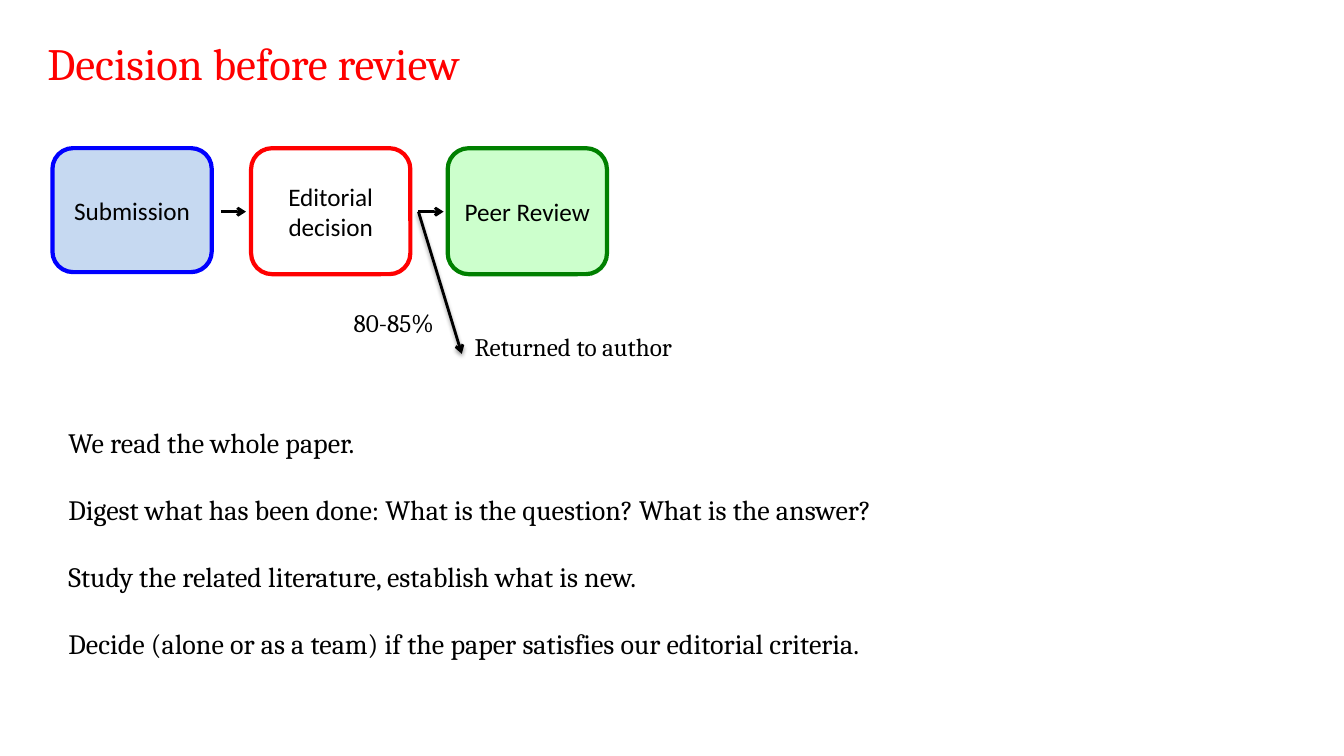
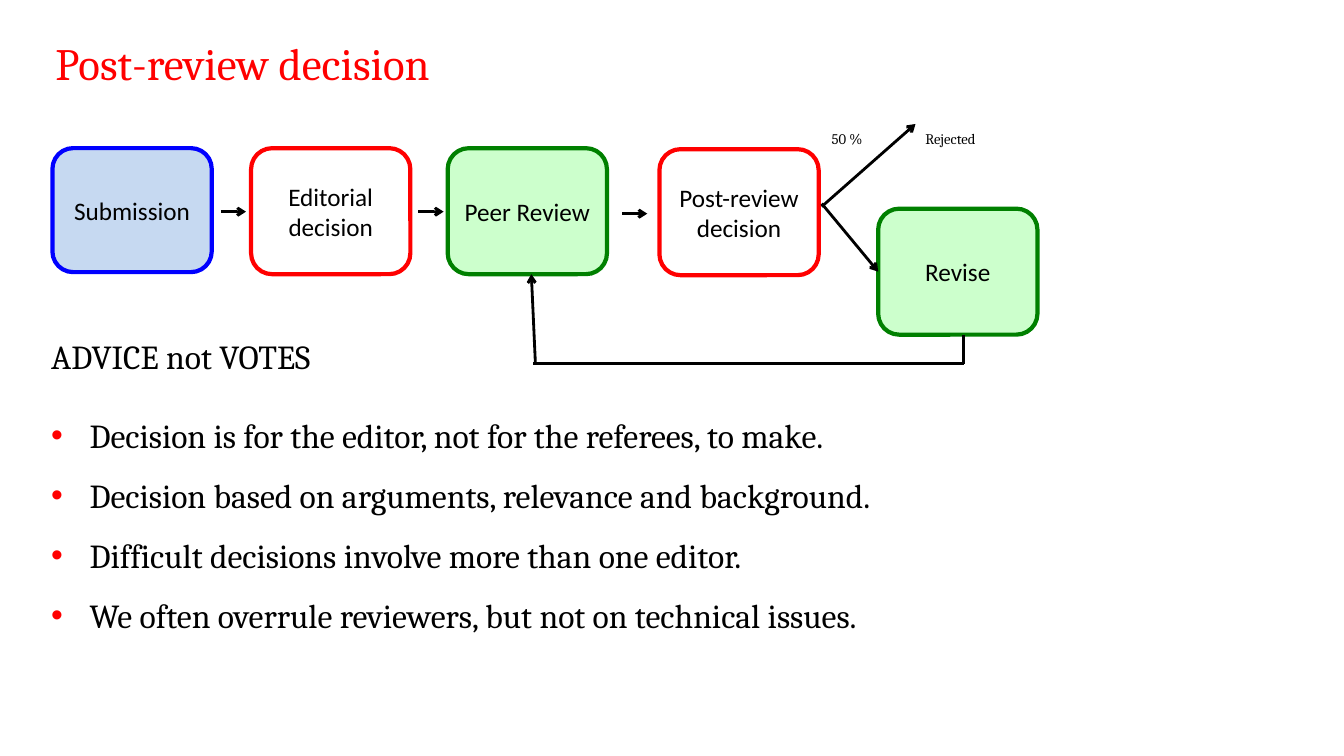
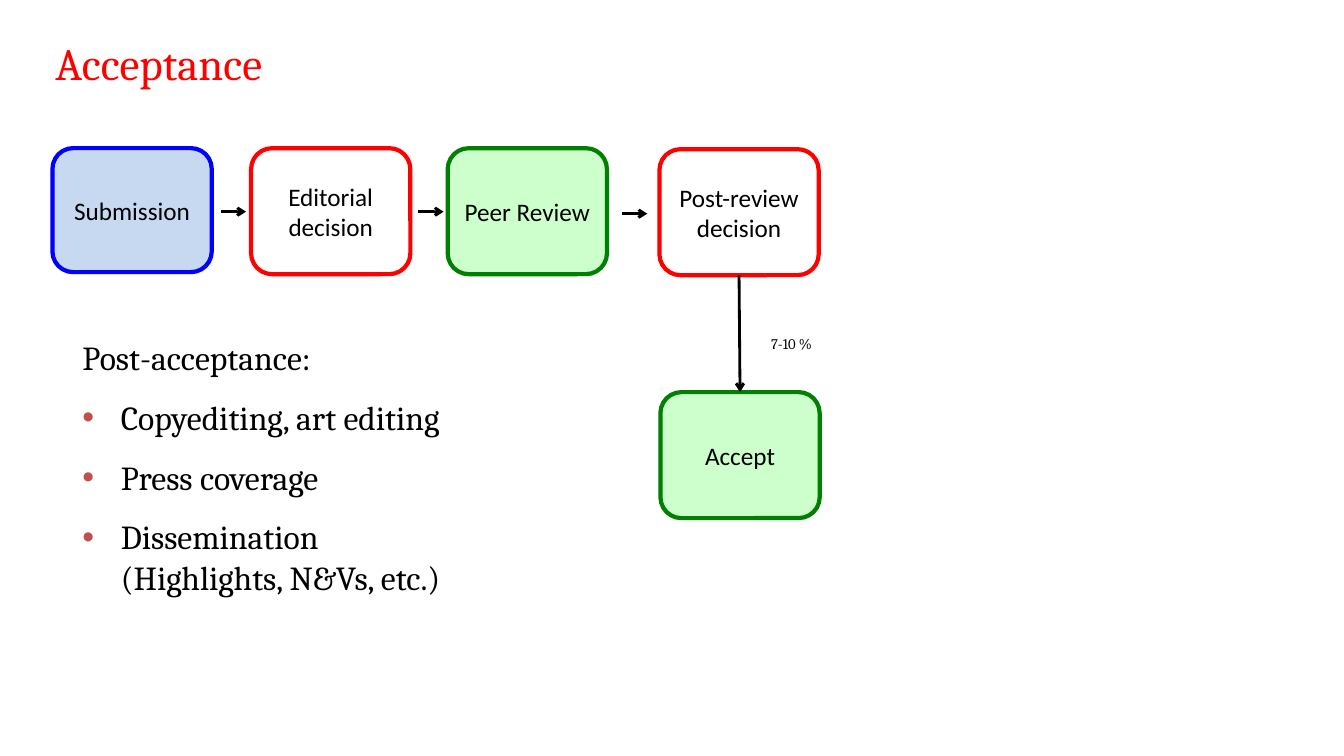
from lxml.etree import SubElement
from pptx import Presentation
from pptx.dml.color import RGBColor
from pptx.enum.shapes import MSO_CONNECTOR, MSO_SHAPE
from pptx.enum.text import MSO_ANCHOR, PP_ALIGN
from pptx.oxml.ns import qn
from pptx.util import Inches, Pt

BLACK = RGBColor(0x00, 0x00, 0x00)
WHITE = RGBColor(0xFF, 0xFF, 0xFF)
RED = RGBColor(0xFF, 0x00, 0x00)
BRICK = RGBColor(0xC0, 0x50, 0x4D)
BLUE = RGBColor(0x00, 0x00, 0xFF)
PALE_BLUE = RGBColor(0xC6, 0xD9, 0xF1)
GREEN = RGBColor(0x00, 0x80, 0x00)
PALE_GREEN = RGBColor(0xCC, 0xFF, 0xCC)
SERIF = "Cambria"
SANS = "Calibri"

STAGES = [
    ("Submission", 0.52, 1.47, 1.23, PALE_BLUE, BLUE),
    ("Editorial decision", 2.49, 1.47, 1.25, WHITE, RED),
    ("Peer Review", 4.44, 1.47, 1.25, PALE_GREEN, GREEN),
    ("Post-review decision", 6.54, 1.48, 1.25, WHITE, RED),
]
STAGE_ARROWS = [(2.19, 2.1), (4.15, 2.1), (6.17, 2.12)]


def add_stage(page, name, left, top, height, fill, outline):
    box = page.shapes.add_shape(
        MSO_SHAPE.ROUNDED_RECTANGLE, Inches(left), Inches(top), Inches(1.58), Inches(height)
    )
    box.shadow.inherit = False
    box.fill.solid()
    box.fill.fore_color.rgb = fill
    box.line.color.rgb = outline
    box.line.width = Pt(3)
    frame = box.text_frame
    frame.word_wrap = True
    frame.vertical_anchor = MSO_ANCHOR.MIDDLE
    frame.margin_left = frame.margin_right = Inches(0.05)
    para = frame.paragraphs[0]
    para.alignment = PP_ALIGN.CENTER
    span = para.add_run()
    span.text = name
    span.font.name = SANS
    span.font.size = Pt(18)
    span.font.color.rgb = BLACK
    return box


def add_line(page, x1, y1, x2, y2, arrow=True):
    line = page.shapes.add_connector(
        MSO_CONNECTOR.STRAIGHT, Inches(x1), Inches(y1), Inches(x2), Inches(y2)
    )
    line.line.color.rgb = BLACK
    line.line.width = Pt(2)
    SubElement(line._element.spPr, qn("a:effectLst"))
    if arrow:
        SubElement(line.line._get_or_add_ln(), qn("a:tailEnd"), type="arrow")
    return line


deck = Presentation()
deck.slide_width = Inches(13.33)
deck.slide_height = Inches(7.5)

pages = []
last_stages = []
for heading, title_left, stage_count in [
    ("Decision before review", 0.37, 3),
    ("Post-review decision", 0.45, 4),
    ("Acceptance", 0.45, 4),
]:
    page = deck.slides.add_slide(deck.slide_layouts[5])
    title = page.shapes.title
    title.left, title.top = Inches(title_left), Inches(0)
    title.width, title.height = Inches(9), Inches(1.25)
    title.text_frame.vertical_anchor = MSO_ANCHOR.MIDDLE
    para = title.text_frame.paragraphs[0]
    para.alignment = PP_ALIGN.LEFT
    span = para.add_run()
    span.text = heading
    span.font.name = SERIF
    span.font.size = Pt(32)
    span.font.color.rgb = RED
    for stage in STAGES[:stage_count]:
        box = add_stage(page, *stage)
    for x, y in STAGE_ARROWS[:stage_count - 1]:
        add_line(page, x, y, x + 0.25, y)
    pages.append(page)
    last_stages.append(box)

before_page, after_page, accept_page = pages

return_arrow = add_line(before_page, 4.15, 2.1, 4.58, 3.51)
effects = return_arrow._element.spPr.find(qn("a:effectLst"))
shadow = SubElement(
    effects, qn("a:outerShdw"), blurRad=str(Pt(3.1)), dist=str(Pt(1.6)), dir="5400000"
)
shadow_color = SubElement(shadow, qn("a:srgbClr"), val="000000")
SubElement(shadow_color, qn("a:alpha"), val="38000")

revise = add_stage(after_page, "Revise", 8.71, 2.07, 1.25, PALE_GREEN, GREEN)
add_line(after_page, 8.15, 2.05, 9.08, 1.23)
revise_arrow = add_line(after_page, 8.15, 2.02, 8.71, 2.69)
revise_arrow.end_connect(revise, 1)
add_line(after_page, 9.56, 3.32, 9.56, 3.61, arrow=False)
add_line(after_page, 5.29, 3.61, 9.56, 3.61, arrow=False)
add_line(after_page, 5.31, 3.6, 5.27, 2.72)

accept = add_stage(accept_page, "Accept", 6.55, 3.89, 1.25, PALE_GREEN, GREEN)
accept_arrow = add_line(accept_page, 7.33, 2.73, 7.34, 3.89)
accept_arrow.begin_connect(last_stages[2], 2)
accept_arrow.end_connect(accept, 0)

for page, label, left, top, width, height, size in [
    (before_page, "Returned to author", 4.61, 3.24, 2.38, 0.4, 18),
    (before_page, "80-85%", 3.41, 3, 1.17, 0.4, 18),
    (after_page, "Rejected", 9.08, 1.24, 1.17, 0.27, 10.5),
    (after_page, "50 %", 8.15, 1.24, 1, 0.27, 10.5),
    (accept_page, "7-10 %", 7.55, 3.27, 1.17, 0.27, 10.5),
]:
    box = page.shapes.add_textbox(Inches(left), Inches(top), Inches(width), Inches(height))
    box.text_frame.word_wrap = True
    span = box.text_frame.paragraphs[0].add_run()
    span.text = label
    span.font.name = SERIF
    span.font.size = Pt(size)
    span.font.color.rgb = BLACK

BODIES = [
    (before_page, (0.54, 4.17, 10.85, 2.46), 20, 24, 0, None, [
        "We read the whole paper.",
        "Digest what has been done: What is the question? What is the answer?",
        "Study the related literature, establish what is new.",
        "Decide (alone or as a team) if the paper satisfies our editorial criteria.",
    ]),
    (after_page, (0.37, 3.28, 10.87, 3.06), 24, 14, 14, RED, [
        "ADVICE not VOTES",
        "Decision is for the editor, not for the referees, to make.",
        "Decision based on arguments, relevance and background.",
        "Difficult decisions involve more than one editor.",
        "We often overrule reviewers, but not on technical issues.",
    ]),
    (accept_page, (0.68, 3.29, 4.4, 3.06), 24, 14, 0, BRICK, [
        "Post-acceptance:",
        "Copyediting, art editing",
        "Press coverage",
        "Dissemination\n(Highlights, N&Vs, etc.)",
    ]),
]
for page, place, size, gap, heading_gap, bullet_color, texts in BODIES:
    box = page.shapes.add_textbox(*[Inches(length) for length in place])
    frame = box.text_frame
    frame.word_wrap = True
    for index, text in enumerate(texts):
        para = frame.paragraphs[0] if index == 0 else frame.add_paragraph()
        properties = para._p.get_or_add_pPr()
        if index and bullet_color is not None:
            properties.set("marL", str(Inches(0.42)))
            properties.set("indent", str(Inches(-0.38)))
            color = SubElement(properties, qn("a:buClr"))
            SubElement(color, qn("a:srgbClr"), val=str(bullet_color))
            SubElement(properties, qn("a:buFont"), typeface="Arial")
            SubElement(properties, qn("a:buChar"), char="•")
        else:
            properties.set("marL", str(Inches(0.04)))
            properties.set("indent", "0")
        if index:
            para.space_before = Pt(gap)
        elif heading_gap:
            para.space_after = Pt(heading_gap)
        for part, line_text in enumerate(text.split("\n")):
            if part:
                para.add_line_break()
            span = para.add_run()
            span.text = line_text
            span.font.name = SERIF
            span.font.size = Pt(size)
            span.font.color.rgb = BLACK

deck.save("out.pptx")
